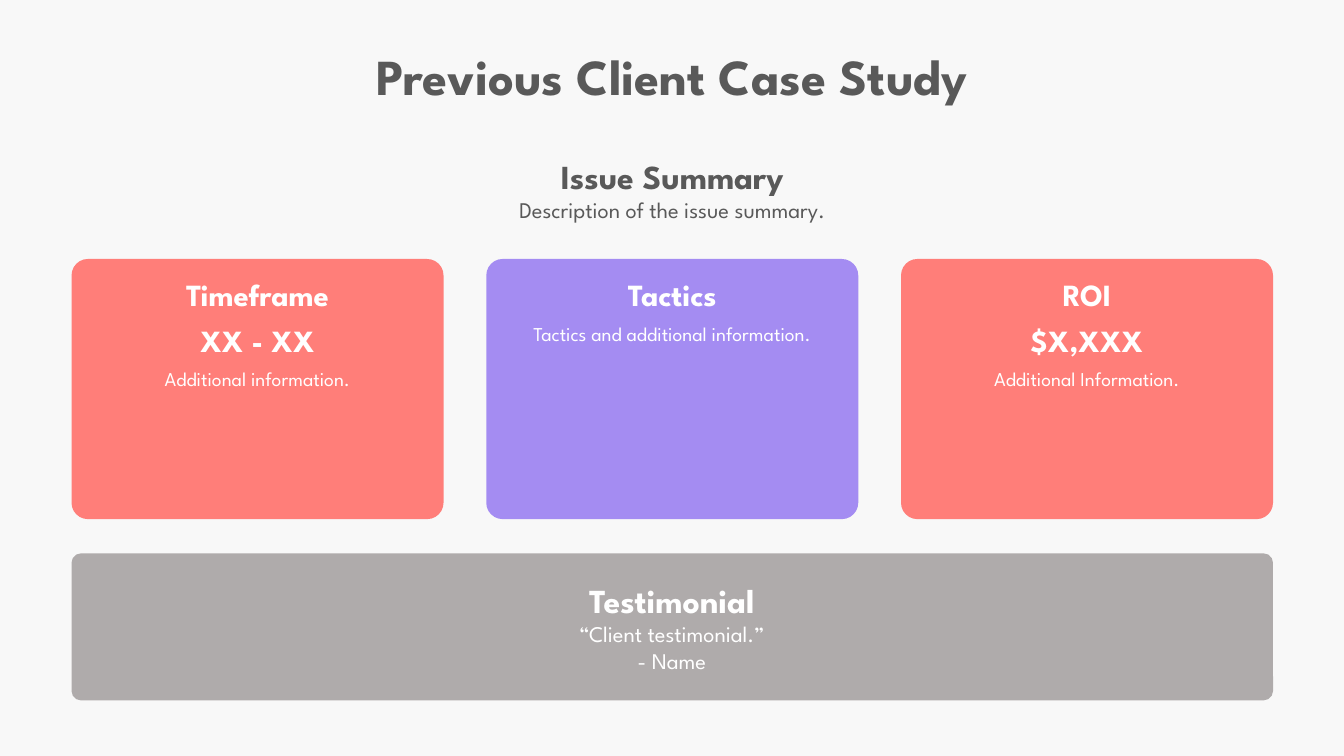
import pptx
import pptx.dml.color
import pptx.enum.shapes
import pptx.enum.text
import pptx.util

Pt = pptx.util.Pt

FONT = "League Spartan"
DARK, WHITE = "595959", "FFFFFF"
CORAL, VIOLET, GREY = "FF7E79", "A48CF2", "AFABAB"
BACKGROUND = "F8F8F8"

MARGIN, CONTENT_WIDTH = 51.1, 858.2
CARD_TOP, CARD_WIDTH, CARD_HEIGHT = 185, 265.7, 185.8
CARD_INSET = 18.4

# Each card: fill, text height, lines of (wording, size, bold)
CARDS = [
    (CORAL, 95.8, [("Timeframe", 22, True), ("XX - XX", 22, True),
                   ("Additional information.", 14, False)]),
    (VIOLET, 79.9, [("Tactics", 22, True),
                    ("Tactics and additional information.", 14, False)]),
    (CORAL, 95.8, [("ROI", 22, True), ("$X,XXX", 22, True),
                   ("Additional Information.", 14, False)]),
]


def paint(fill, hex_color):
    fill.solid()
    fill.fore_color.rgb = pptx.dml.color.RGBColor.from_string(hex_color)


def place(shape, left, top, width, height):
    shape.left, shape.top = Pt(left), Pt(top)
    shape.width, shape.height = Pt(width), Pt(height)


def write_lines(frame, lines, color, space_before=0):
    """Fill a text frame with centred lines of (wording, size, bold)."""
    frame.word_wrap = True
    frame.auto_size = pptx.enum.text.MSO_AUTO_SIZE.NONE
    frame.vertical_anchor = pptx.enum.text.MSO_ANCHOR.TOP
    for index, (wording, size, bold) in enumerate(lines):
        paragraph = frame.add_paragraph() if index else frame.paragraphs[0]
        paragraph.alignment = pptx.enum.text.PP_ALIGN.CENTER
        paragraph.space_before = Pt(space_before)
        run = paragraph.add_run()
        run.text = wording
        run.font.name = FONT
        run.font.size = Pt(size)
        run.font.bold = bold
        paint(run.font.fill, color)


def add_title(slide, wording):
    title = slide.shapes.title
    place(title, MARGIN, 28.8, CONTENT_WIDTH, 51.1)
    write_lines(title.text_frame, [(wording, 36, True)], DARK)


def add_text(slide, box, lines, color, space_before=0):
    textbox = slide.shapes.add_textbox(*map(Pt, box))
    write_lines(textbox.text_frame, lines, color, space_before)


def add_panel(slide, box, color):
    panel = slide.shapes.add_shape(
        pptx.enum.shapes.MSO_SHAPE.ROUNDED_RECTANGLE, *map(Pt, box))
    panel.adjustments[0] = 0.063
    panel.shadow.inherit = False
    paint(panel.fill, color)
    panel.line.fill.background()


def add_cards(slide):
    pitch = (CONTENT_WIDTH - CARD_WIDTH) / (len(CARDS) - 1)
    for index, (color, text_height, lines) in enumerate(CARDS):
        left = MARGIN + index * pitch
        add_panel(slide, (left, CARD_TOP, CARD_WIDTH, CARD_HEIGHT), color)
        add_text(slide, (left + CARD_INSET, CARD_TOP + 8.7,
                         CARD_WIDTH - 2 * CARD_INSET, text_height),
                 lines, WHITE, space_before=6)


def add_testimonial(slide):
    add_panel(slide, (MARGIN, 395.3, CONTENT_WIDTH, 105), GREY)
    add_text(slide, (78.5, 410.4, 802.8, 74.9),
             [("Testimonial", 24, True), ("“Client testimonial.”", 16, False),
              ("- Name", 16, False)], WHITE)


def main():
    deck = pptx.Presentation()
    deck.slide_width, deck.slide_height = Pt(960), Pt(540)
    slide = deck.slides.add_slide(deck.slide_layouts.get_by_name("Title Only"))
    paint(slide.background.fill, BACKGROUND)
    add_title(slide, "Previous Client Case Study")
    add_text(slide, (MARGIN, 108, CONTENT_WIDTH, 55.4),
             [("Issue Summary", 24, True),
              ("Description of the issue summary.", 16, False)], DARK)
    add_cards(slide)
    add_testimonial(slide)
    deck.save("out.pptx")


if __name__ == "__main__":
    main()
